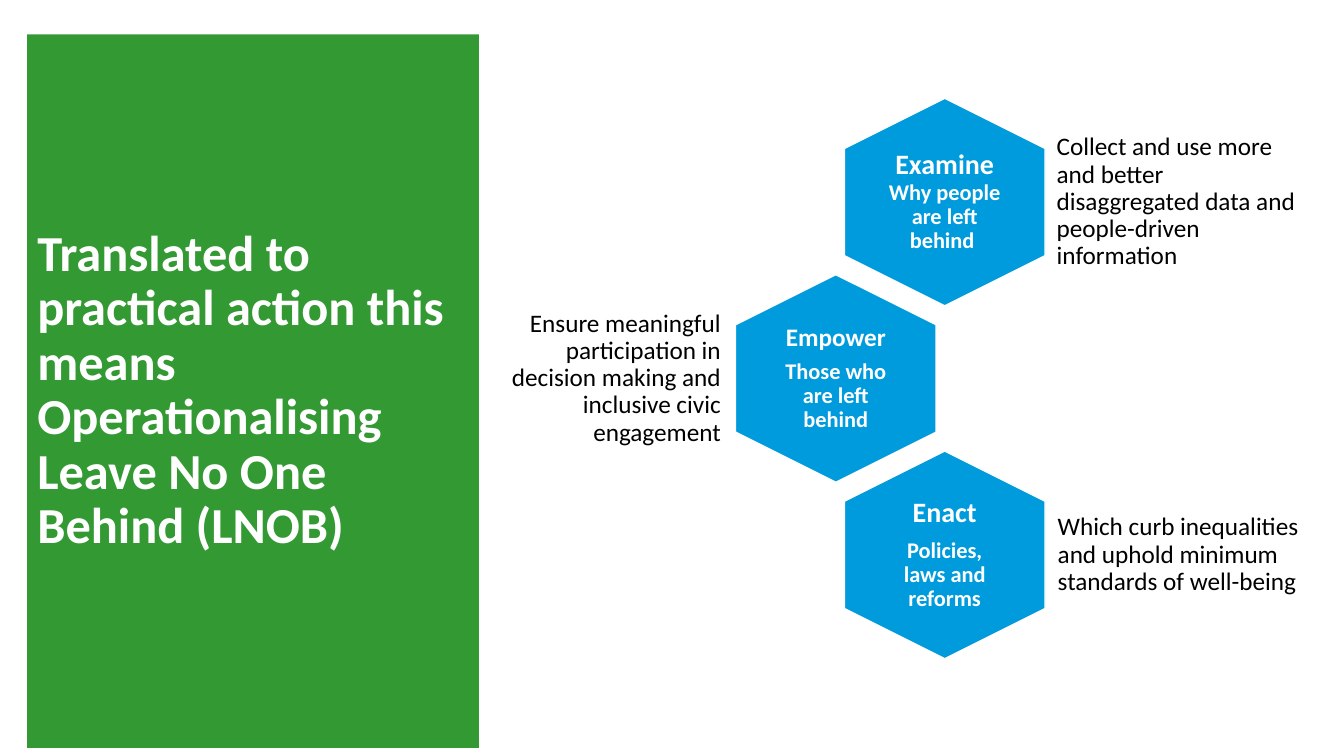
"""Build the slide on operationalising Leave No One Behind."""
from pptx import Presentation
from pptx.dml.color import RGBColor
from pptx.enum.shapes import MSO_SHAPE
from pptx.enum.text import MSO_ANCHOR, MSO_AUTO_SIZE, PP_ALIGN
from pptx.util import Inches, Pt

GREEN = RGBColor(0x33, 0x99, 0x33)
BLUE = RGBColor(0x00, 0x9B, 0xDD)
WHITE = RGBColor(0xFF, 0xFF, 0xFF)
BLACK = RGBColor(0x00, 0x00, 0x00)


def format_frame(tf, inset):
    tf.word_wrap = True
    tf.auto_size = MSO_AUTO_SIZE.NONE
    tf.vertical_anchor = MSO_ANCHOR.MIDDLE
    tf.margin_left = tf.margin_right = Inches(inset)
    tf.margin_top = tf.margin_bottom = Inches(min(inset, 0.05))


def add_text(p, text, size, color, bold, align):
    p.alignment = align
    p.line_spacing = 0.9
    r = p.add_run()
    r.text = text
    r.font.name = "Calibri"
    r.font.size = Pt(size)
    r.font.bold = bold
    r.font.color.rgb = color


prs = Presentation()
prs.slide_width = Inches(13.33)
prs.slide_height = Inches(7.5)
s = prs.slides.add_slide(prs.slide_layouts[5])

title = s.shapes.title
title.left, title.top = Inches(0.27), Inches(0.34)
title.width, title.height = Inches(4.48), Inches(7.08)
title.fill.solid()
title.fill.fore_color.rgb = GREEN
format_frame(title.text_frame, 0.1)
add_text(title.text_frame.paragraphs[0],
         "Translated to practical action this means Operationalising Leave No One Behind (LNOB)",
         36, WHITE, True, PP_ALIGN.LEFT)

HEX_W, HEX_H = 2.06, 1.99
TOP, STEP = 1.01, 1.75
LABEL_W, LABEL_H = 1.37, 1.42
NOTE_H = 1.24
RIGHT = (8.34, 10.42, 2.55, PP_ALIGN.LEFT)
LEFT = (7.26, 4.75, 2.47, PP_ALIGN.RIGHT)

steps = [
    (RIGHT, [[("Examine ", 20), ("Why people are left behind ", 16)]], 0,
     "Collect and use more and better disaggregated data and people-driven information"),
    (LEFT, [[("Empower", 18)], [("Those who are left behind", 16)]], 6.3,
     "Ensure meaningful participation in decision making and inclusive civic engagement"),
    (RIGHT, [[("Enact", 20)], [("Policies, laws and reforms", 16)]], 7,
     "Which curb inequalities and uphold minimum standards of well-being"),
]

for i, ((hex_x, note_x, note_w, note_align), label, gap, note) in enumerate(steps):
    hex_y = TOP + i * STEP
    mid_x, mid_y = hex_x + HEX_W / 2, hex_y + HEX_H / 2

    sp = s.shapes.add_shape(MSO_SHAPE.HEXAGON, Inches(hex_x), Inches(hex_y),
                            Inches(HEX_W), Inches(HEX_H))
    sp.rotation = 90
    sp.adjustments[0] = 0.25
    sp.adjustments[1] = 1.1547
    sp.shadow.inherit = False
    sp.fill.solid()
    sp.fill.fore_color.rgb = BLUE
    sp.line.color.rgb = WHITE
    sp.line.width = Pt(1)

    tb = s.shapes.add_textbox(Inches(mid_x - LABEL_W / 2), Inches(mid_y - LABEL_H / 2),
                              Inches(LABEL_W), Inches(LABEL_H))
    tf = tb.text_frame
    format_frame(tf, 0.08)
    for j, runs in enumerate(label):
        p = tf.add_paragraph() if j else tf.paragraphs[0]
        if j:
            p.space_before = Pt(gap)
        for text, size in runs:
            add_text(p, text, size, WHITE, True, PP_ALIGN.CENTER)

    tb = s.shapes.add_textbox(Inches(note_x), Inches(mid_y - NOTE_H / 2),
                              Inches(note_w), Inches(NOTE_H))
    format_frame(tb.text_frame, 0.07 if i else 0.06)
    add_text(tb.text_frame.paragraphs[0], note, 18, BLACK, False, note_align)

prs.save("out.pptx")
